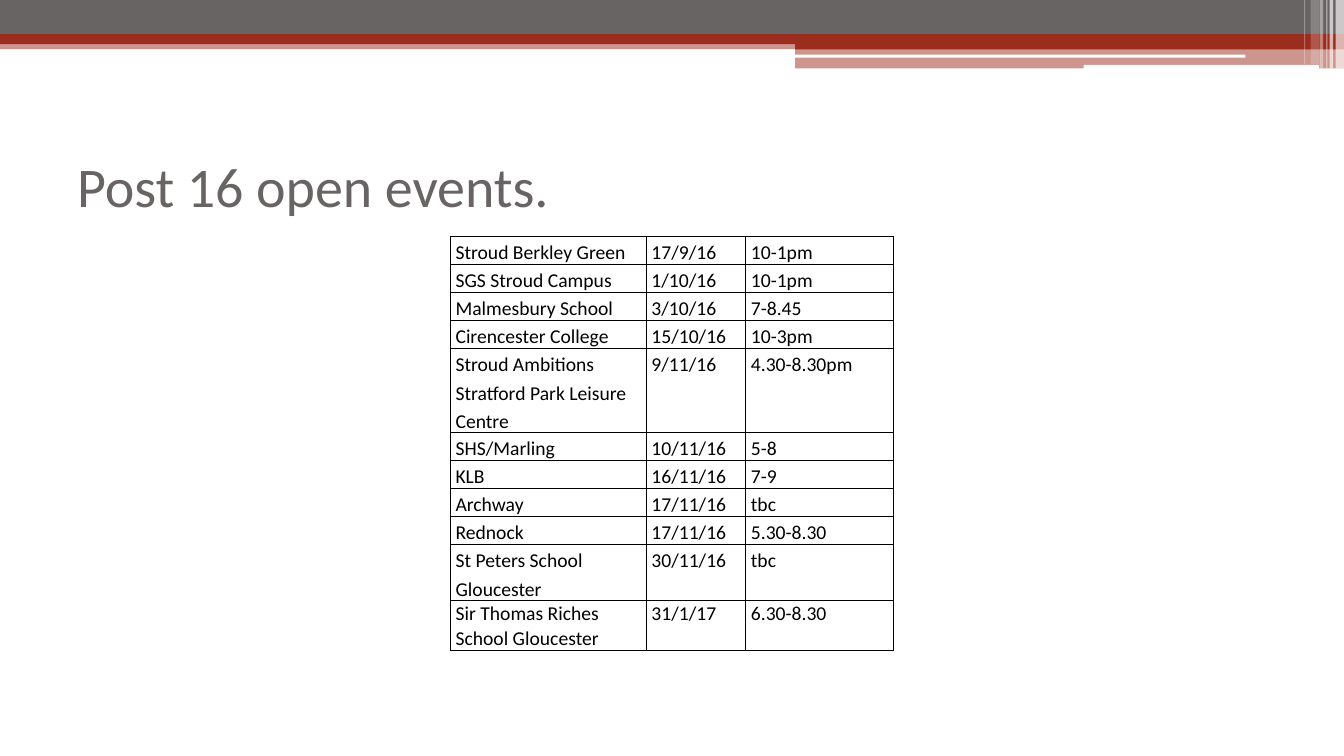
import dataclasses
import typing

import lxml.etree
import pptx
import pptx.dml.color
import pptx.enum.shapes
import pptx.enum.text
import pptx.oxml.ns
import pptx.util

Pt = pptx.util.Pt
Kind = pptx.enum.shapes.MSO_SHAPE


@dataclasses.dataclass(frozen=True)
class Theme:
    gray: str = "696464"
    red: str = "9B2D1F"
    white: str = "FFFFFF"
    black: str = "000000"
    face: str = "Calibri"
    head: float = 40
    body: float = 14


@dataclasses.dataclass(frozen=True)
class Bar:
    left: float
    top: float
    width: float
    height: float
    color: str
    solid: int = 100
    kind: Kind = Kind.RECTANGLE


class Event(typing.NamedTuple):
    place: str
    date: str
    time: str
    height: float = 19.5
    pitch: float = 1.19


THEME = Theme()
WIDE, HIGH = 960, 540
MID = 568

BARS = [
    Bar(0, 28.8, WIDE, 6.3, THEME.red, 50),
    Bar(0, 0, WIDE, 24.4, THEME.gray),
    Bar(0, 24.4, WIDE, 7.2, THEME.red),
    Bar(MID, 28.2, WIDE - MID, 7.2, THEME.red),
    Bar(MID, 34.8, WIDE - MID, 14.1, THEME.red, 50),
    Bar(MID - 0.5, 39.1, 322, 2.16, THEME.white, kind=Kind.ROUNDED_RECTANGLE),
    Bar(774, 46.3, 168, 2.88, THEME.white, kind=Kind.ROUNDED_RECTANGLE),
]

# left, width, height and percent solid of each white stripe
STRIPES = [
    (954, 6, 49, 65),
    (949.8, 2.5, 49, 65),
    (947.4, 0.72, 49, 60),
    (942.6, 2.5, 49, 40),
    (936.2, 5.8, 46, 20),
    (931.6, 0.72, 46, 30),
]

COLUMNS = [139.9, 71.1, 105.2]
EVENTS = [
    Event("Stroud Berkley Green", "17/9/16", "10-1pm"),
    Event("SGS Stroud Campus", "1/10/16", "10-1pm"),
    Event("Malmesbury School", "3/10/16", "7-8.45"),
    Event("Cirencester College", "15/10/16", "10-3pm"),
    Event("Stroud Ambitions Stratford Park Leisure Centre", "9/11/16",
          "4.30-8.30pm", 58.5),
    Event("SHS/Marling", "10/11/16", "5-8"),
    Event("KLB", "16/11/16", "7-9"),
    Event("Archway", "17/11/16", "tbc"),
    Event("Rednock", "17/11/16", "5.30-8.30"),
    Event("St Peters School Gloucester", "30/11/16", "tbc", 39),
    Event("Sir Thomas Riches School Gloucester", "31/1/17", "6.30-8.30",
          35.3, 1.05),
]


def style(item: typing.Any, values: dict[str, typing.Any]) -> None:
    for name, value in values.items():
        setattr(item, name, value)


def tint(color: str) -> pptx.dml.color.RGBColor:
    return pptx.dml.color.RGBColor.from_string(color)


def add_tag(parent: typing.Any, name: str, **values: str) -> typing.Any:
    """Append a drawing element and return it."""
    return lxml.etree.SubElement(parent, pptx.oxml.ns.qn(name), values)


def draw_bar(slide: typing.Any, bar: Bar) -> None:
    box = (Pt(n) for n in (bar.left, bar.top, bar.width, bar.height))
    shape = slide.shapes.add_shape(bar.kind, *box)
    shape.shadow.inherit = False
    shape.line.fill.background()
    shape.fill.solid()
    shape.fill.fore_color.rgb = tint(bar.color)
    if bar.solid < 100:
        color = shape.fill._xPr.find(".//" + pptx.oxml.ns.qn("a:srgbClr"))
        add_tag(color, "a:alpha", val=str(bar.solid * 1000))


def write(frame: typing.Any, text: str, size: float, color: str,
          pitch: float = 1) -> None:
    line = frame.paragraphs[0]
    line.line_spacing = pitch
    run = line.add_run()
    run.text = text
    style(run.font, {"name": THEME.face, "size": Pt(size)})
    run.font.color.rgb = tint(color)


def draw_title(slide: typing.Any, text: str) -> None:
    box = slide.shapes.add_textbox(Pt(48), Pt(90), Pt(864), Pt(84))
    style(box.text_frame, {
        "word_wrap": True,
        "vertical_anchor": pptx.enum.text.MSO_ANCHOR.MIDDLE,
    })
    write(box.text_frame, text, THEME.head, THEME.gray)


def frame_cell(cell: typing.Any) -> None:
    """Clear the fill and rule all four sides."""
    props = cell._tc.get_or_add_tcPr()
    for side in "LRTB":
        edge = add_tag(props, f"a:ln{side}", w=str(Pt(1)))
        fill = add_tag(edge, "a:solidFill")
        add_tag(fill, "a:srgbClr", val=THEME.black)
    cell.fill.background()


def draw_table(slide: typing.Any, events: list[Event]) -> None:
    total = sum(event.height for event in events)
    table = slide.shapes.add_table(
        len(events), len(COLUMNS), Pt(321.8), Pt(169),
        Pt(sum(COLUMNS)), Pt(total)).table
    style(table, {"first_row": False, "horz_banding": False})
    for column, width in zip(table.columns, COLUMNS):
        column.width = Pt(width)
    for row, event in zip(table.rows, events):
        row.height = Pt(event.height)
        for cell, text in zip(row.cells, event[:3]):
            style(cell, {"margin_left": Pt(3.6), "margin_right": Pt(3.6),
                         "margin_top": 0, "margin_bottom": 0})
            write(cell.text_frame, text, THEME.body, THEME.black, event.pitch)
            frame_cell(cell)


def main() -> None:
    deck = pptx.Presentation()
    style(deck, {"slide_width": Pt(WIDE), "slide_height": Pt(HIGH)})
    slide = deck.slides.add_slide(deck.slide_layouts[6])
    stripes = [Bar(left, 0, width, height, THEME.white, solid)
               for left, width, height, solid in STRIPES]
    for bar in BARS + stripes:
        draw_bar(slide, bar)
    draw_title(slide, "Post 16 open events.")
    draw_table(slide, EVENTS)
    deck.save("out.pptx")


if __name__ == "__main__":
    main()
